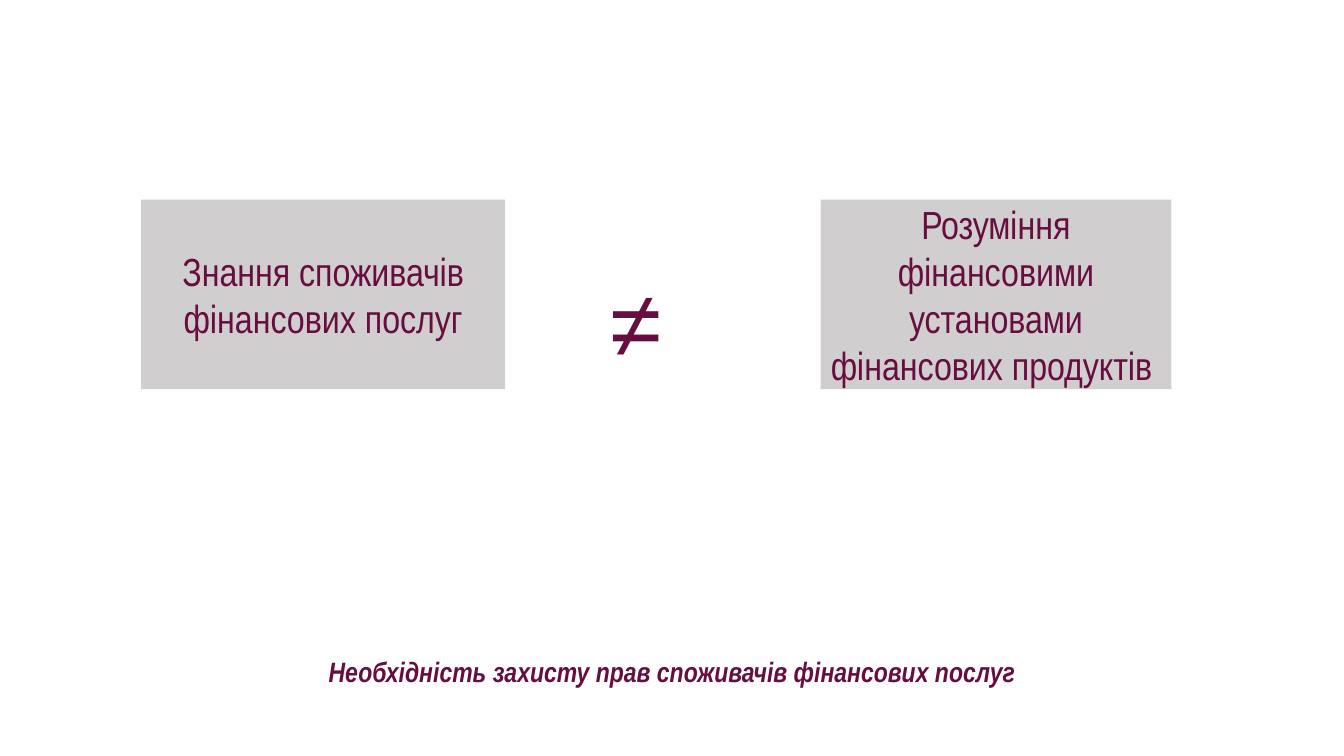
from pptx import Presentation
from pptx.dml.color import RGBColor
from pptx.enum.shapes import MSO_SHAPE
from pptx.enum.text import MSO_ANCHOR, MSO_AUTO_SIZE, PP_ALIGN
from pptx.util import Cm, Pt

RECTANGLE = MSO_SHAPE.RECTANGLE
TOP, MIDDLE = MSO_ANCHOR.TOP, MSO_ANCHOR.MIDDLE
CENTER = PP_ALIGN.CENTER
GROW = MSO_AUTO_SIZE.SHAPE_TO_FIT_TEXT

PAGE_WIDTH, PAGE_HEIGHT = 33.87, 19.05
CARD_TOP, CARD_HEIGHT = 5.03, 4.78


def color(value):
    return RGBColor.from_string(value)


class Page:
    font = "Arial Narrow"
    ink = "670D40"
    card_fill = "D0CECE"
    paper = "FFFFFF"

    def __init__(self, deck):
        self.page = deck.slides.add_slide(deck.slide_layouts[6])

    def add_lines(self, box, lines, size, anchor=MIDDLE, emphasis=False, baseline=None):
        frame = box.text_frame
        frame.word_wrap = True
        frame.vertical_anchor = anchor
        for index, line in enumerate(lines):
            para = frame.paragraphs[0] if index == 0 else frame.add_paragraph()
            para.alignment = CENTER
            span = para.add_run()
            span.text = line
            span.font.name = self.font
            span.font.size = Pt(size)
            span.font.bold = span.font.italic = emphasis
            span.font.color.rgb = color(self.ink)
            if baseline is not None:
                span._r.get_or_add_rPr().set("baseline", str(baseline * 1000))

    def panel(self, left, top, width, height, fill):
        box = self.page.shapes.add_shape(
            RECTANGLE, Cm(left), Cm(top), Cm(width), Cm(height))
        box.shadow.inherit = False
        box.fill.solid()
        box.fill.fore_color.rgb = color(fill)
        box.line.fill.background()
        return box

    def card(self, left, width, lines):
        box = self.panel(left, CARD_TOP, width, CARD_HEIGHT, self.card_fill)
        self.add_lines(box, lines, 28)

    def banner(self, top, height, line):
        box = self.panel(0, top, PAGE_WIDTH, height, self.paper)
        self.add_lines(box, [line], 20, anchor=TOP, emphasis=True)
        box.text_frame.auto_size = GROW

    def sign(self, left, top, width, height, symbol):
        box = self.page.shapes.add_textbox(Cm(left), Cm(top), Cm(width), Cm(height))
        self.add_lines(box, [symbol], 115, baseline=-25)


def main():
    deck = Presentation()
    deck.slide_width = Cm(PAGE_WIDTH)
    deck.slide_height = Cm(PAGE_HEIGHT)
    page = Page(deck)
    page.card(3.56, 9.17, ["Знання споживачів", "фінансових послуг"])
    page.banner(16.38, 1.12, "Необхідність захисту прав споживачів фінансових послуг")
    page.card(20.68, 8.84, ["Розуміння фінансовими установами", "фінансових продуктів "])
    page.sign(11.99, 3.07, 8.08, 7.29, "≠")
    deck.save("out.pptx")


if __name__ == "__main__":
    main()
